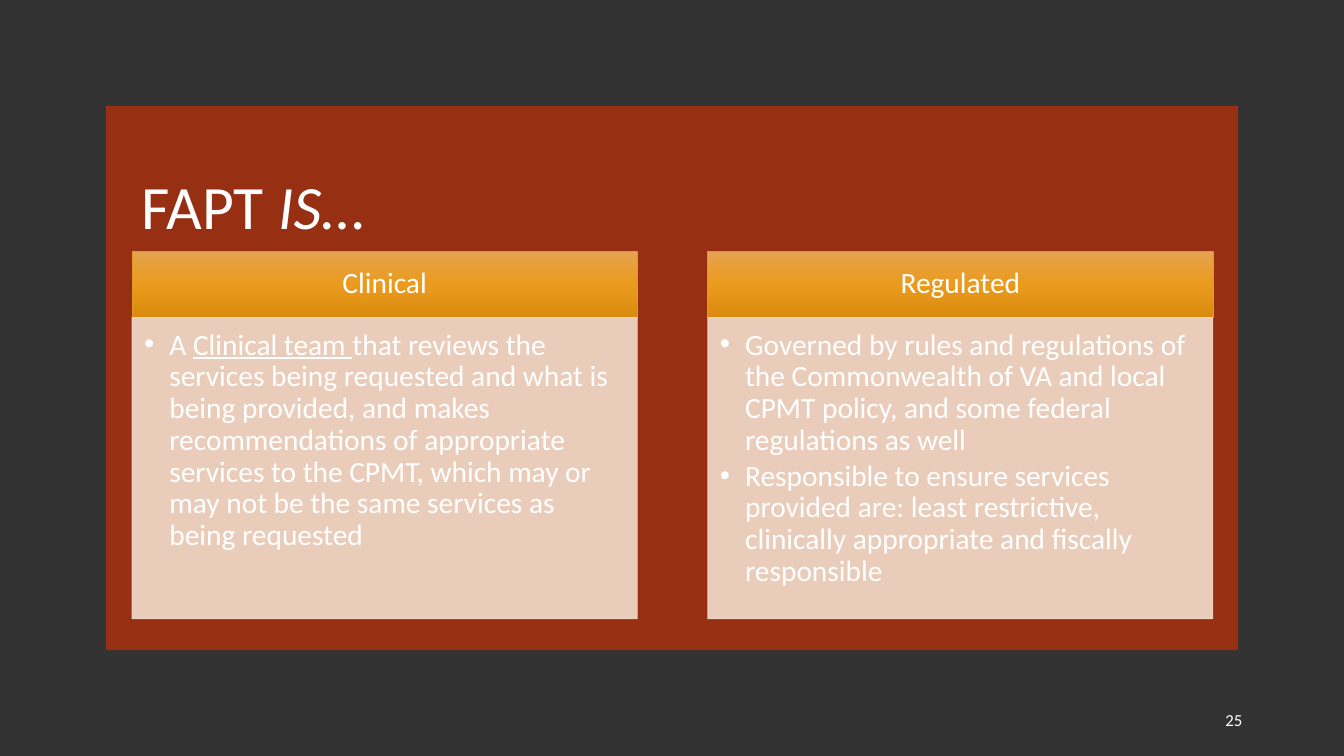
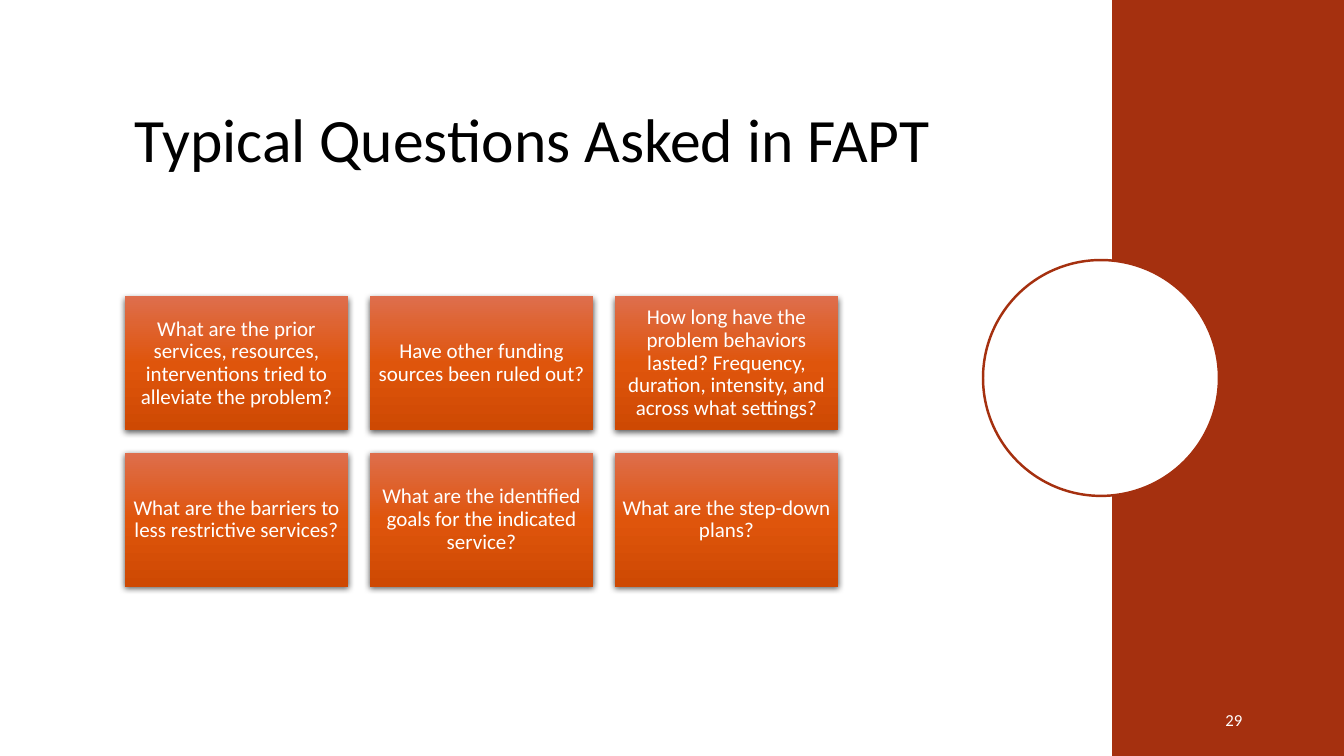
from lxml import etree
from pptx import Presentation
from pptx.dml.color import RGBColor
from pptx.enum.shapes import MSO_SHAPE
from pptx.enum.text import MSO_ANCHOR, PP_ALIGN
from pptx.oxml.ns import qn
from pptx.util import Inches, Pt

RECTANGLE, OVAL = MSO_SHAPE.RECTANGLE, MSO_SHAPE.OVAL
LEFT, CENTER, RIGHT = PP_ALIGN.LEFT, PP_ALIGN.CENTER, PP_ALIGN.RIGHT
TOP, MIDDLE, BOTTOM = MSO_ANCHOR.TOP, MSO_ANCHOR.MIDDLE, MSO_ANCHOR.BOTTOM

FONT = "Calibri"
WHITE, BLACK, CHARCOAL = "FFFFFF", "000000", "323232"
RUST, PEACH, AMBER_LINE = "A5300F", "F4DDCD", "E19825"
AMBER_GRADIENT = ("E6A351", "EA9A1C", "DB8B0E")
ORANGE_GRADIENT = ("DE6E4C", "DF550C", "CE4903")
TITLE_SIZE, NUMBER_SIZE, COLUMN_SIZE, CARD_SIZE = 44, 12, 21, 15
DEFAULT_INSETS = (0.1, 0.05, 0.1, 0.05)

COLUMNS = [
    ("Clinical", [
        [("A ", {}), ("Clinical team ", {"underline": True}),
         ("that reviews the services being requested and what is being provided, "
          "and makes recommendations of appropriate services to the CPMT, which "
          "may or may not be the same services as being requested", {})],
    ]),
    ("Regulated", [
        "Governed by rules and regulations of the Commonwealth of VA and local "
        "CPMT policy, and some federal regulations as well",
        "Responsible to ensure services provided are: least restrictive, "
        "clinically appropriate and fiscally responsible",
    ]),
]

QUESTIONS = [
    "What are the prior services, resources, interventions tried to alleviate the problem?",
    "Have other funding sources been ruled out?",
    "How long have the problem behaviors lasted? Frequency, duration, intensity, "
    "and across what settings?",
    "What are the barriers to less restrictive services?",
    "What are the identified goals for the indicated service?",
    "What are the step-down plans?",
]


def rgb(color):
    return RGBColor.from_string(color)


def add_child(parent, tag, **attributes):
    values = {name: str(value) for name, value in attributes.items()}
    return etree.SubElement(parent, qn(tag), values)


def set_opacity(shape, percent):
    """Apply the opacity to the solid fill and the solid line of a shape."""
    for solid in shape._element.spPr.iter(qn("a:solidFill")):
        add_child(solid[0], "a:alpha", val=percent * 1000)


def set_gradient(shape, colors):
    """Fill from top to bottom with evenly spaced colours."""
    shape.fill.gradient()
    shape.fill.gradient_angle = 270
    stops = shape._element.spPr.find(qn("a:gradFill")).find(qn("a:gsLst"))
    for stop in list(stops):
        stops.remove(stop)
    for index, color in enumerate(colors):
        stop = add_child(stops, "a:gs", pos=index * 100000 // (len(colors) - 1))
        add_child(stop, "a:srgbClr", val=color)


def set_drop_shadow(shape):
    effects = shape._element.spPr.find(qn("a:effectLst"))
    shadow = add_child(effects, "a:outerShdw", blurRad=Pt(4.5), dist=Pt(1.5),
                       dir=5400000, algn="ctr", rotWithShape=0)
    add_child(add_child(shadow, "a:srgbClr", val=BLACK), "a:alpha", val=63000)


def set_bullet(paragraph, indent):
    properties = paragraph._p.get_or_add_pPr()
    properties.set("marL", str(Inches(indent)))
    properties.set("indent", str(-Inches(indent)))
    add_child(properties, "a:buFont", typeface="Arial")
    add_child(properties, "a:buChar", char="•")


def add_shape(slide, box, fill, kind=RECTANGLE, line=None, line_width=0.5):
    """Draw a shape; a tuple of colours as fill makes a gradient."""
    shape = slide.shapes.add_shape(kind, *map(Inches, box))
    shape.shadow.inherit = False
    if isinstance(fill, tuple):
        set_gradient(shape, fill)
    else:
        shape.fill.solid()
        shape.fill.fore_color.rgb = rgb(fill)
    if line:
        shape.line.color.rgb = rgb(line)
        shape.line.width = Pt(line_width)
    else:
        shape.line.fill.background()
    return shape


def write_text(shape, paragraphs, size, color=WHITE, align=LEFT, anchor=MIDDLE,
               insets=DEFAULT_INSETS, space_after=0, bullet_indent=None):
    """Write paragraphs, each a string or a list of (text, font settings)."""
    frame = shape.text_frame
    frame.word_wrap = True
    frame.vertical_anchor = anchor
    (frame.margin_left, frame.margin_top,
     frame.margin_right, frame.margin_bottom) = map(Inches, insets)
    for index, runs in enumerate(paragraphs):
        paragraph = frame.add_paragraph() if index else frame.paragraphs[0]
        paragraph.alignment = align
        paragraph.line_spacing = 0.9
        paragraph.space_after = Pt(space_after)
        if bullet_indent:
            set_bullet(paragraph, bullet_indent)
        for text, settings in [(runs, {})] if isinstance(runs, str) else runs:
            run = paragraph.add_run()
            run.text = text
            run.font.name = FONT
            run.font.size = Pt(size)
            run.font.color.rgb = rgb(color)
            for name, value in settings.items():
                setattr(run.font, name, value)


def add_text(slide, box, paragraphs, size, **text_format):
    text_box = slide.shapes.add_textbox(*map(Inches, box))
    write_text(text_box, paragraphs, size, **text_format)


def add_title(slide, box, runs, **text_format):
    add_text(slide, box, [runs], TITLE_SIZE, **text_format)


def add_slide_number(slide, number):
    add_text(slide, (11.31, 6.95, 1.11, 0.4), [str(number)], NUMBER_SIZE, align=RIGHT)


def add_slide(presentation, background):
    slide = presentation.slides.add_slide(presentation.slide_layouts[6])
    slide.background.fill.solid()
    slide.background.fill.fore_color.rgb = rgb(background)
    return slide


def add_column(slide, left, heading, points):
    top, width, heading_height, body_height = 2.49, 5.01, 0.66, 2.99
    header = add_shape(slide, (left, top, width, heading_height),
                       AMBER_GRADIENT, line=AMBER_LINE)
    write_text(header, [heading], COLUMN_SIZE, align=CENTER,
               insets=(0.16, 0.09, 0.16, 0.09))
    body = add_shape(slide, (left, top + heading_height, width, body_height),
                     PEACH, line=PEACH)
    set_opacity(body, 90)
    write_text(body, points, COLUMN_SIZE, anchor=TOP, space_after=3,
               insets=(0.12, 0.12, 0.16, 0.18), bullet_indent=0.25)


def add_question_card(slide, box, question):
    card = add_shape(slide, box, ORANGE_GRADIENT)
    set_drop_shadow(card)
    write_text(card, [question], CARD_SIZE, align=CENTER, insets=(0.06,) * 4)


def build_definition_slide(presentation):
    slide = add_slide(presentation, CHARCOAL)
    panel = add_shape(slide, (1.05, 1.05, 11.23, 5.4), RUST)
    set_opacity(panel, 88)
    add_title(slide, (1.31, 1.29, 10.73, 1.17),
              [("FAPT ", {}), ("IS", {"italic": True}), ("…", {})], anchor=BOTTOM)
    add_slide_number(slide, 25)
    for index, (heading, points) in enumerate(COLUMNS):
        add_column(slide, 1.31 + index * 5.71, heading, points)


def build_questions_slide(presentation):
    slide = add_slide(presentation, WHITE)
    add_title(slide, (1.24, 0.69, 8.17, 1.45), "Typical Questions Asked in FAPT",
              color=BLACK)
    add_shape(slide, (11.03, 0, 2.3, 7.5), RUST)
    add_shape(slide, (9.75, 2.58, 2.34, 2.34), WHITE, kind=OVAL,
              line=RUST, line_width=1.75)
    add_slide_number(slide, 29)
    width, height, gap = 2.21, 1.33, 0.22
    for index, question in enumerate(QUESTIONS):
        row, column = divmod(index, 3)
        box = (1.24 + column * (width + gap), 2.94 + row * (height + gap), width, height)
        add_question_card(slide, box, question)


def main():
    presentation = Presentation()
    presentation.slide_width = Inches(13.33)
    presentation.slide_height = Inches(7.5)
    build_definition_slide(presentation)
    build_questions_slide(presentation)
    presentation.save("out.pptx")


if __name__ == "__main__":
    main()
